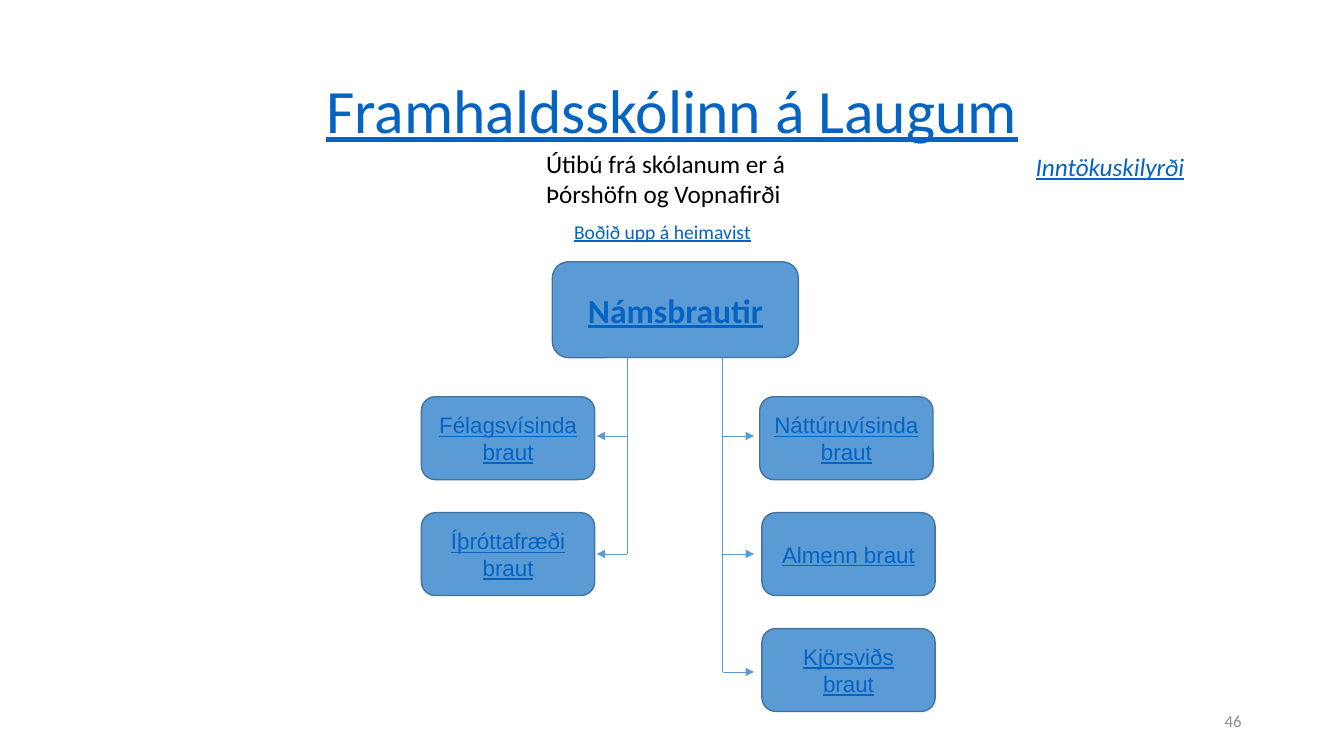
from dataclasses import dataclass
from typing import NamedTuple

from lxml.etree import SubElement
from pptx import Presentation
from pptx.dml.color import RGBColor
from pptx.enum.shapes import MSO_CONNECTOR as Connector, MSO_SHAPE as Shape
from pptx.enum.text import MSO_ANCHOR as Anchor, PP_ALIGN as Align
from pptx.oxml.ns import qn
from pptx.util import Pt


@dataclass(frozen=True)
class Theme:
    """Colours, fonts and type sizes of the slide."""
    link: str = "0563C1"
    ink: str = "000000"
    muted: str = "8C8C8C"
    fill: str = "5B9BD5"
    outline: str = "43739E"
    heading_font: str = "Calibri"
    branch_font: str = "Arial"
    title: int = 44
    root: int = 24
    body: int = 18
    branch: int = 16
    small: int = 14
    number: int = 12


class Box(NamedTuple):
    """A rectangle in points."""
    left: float
    top: float
    width: float
    height: float

    def lengths(self):
        """Return the four values as lengths."""
        return [Pt(value) for value in self]


THEME = Theme()


def write(shape, text, size, color=THEME.link, name=THEME.heading_font,
          align=Align.LEFT, anchor=Anchor.MIDDLE, bold=False, italic=False):
    """Put one styled paragraph in a shape, underlined when link-coloured."""
    frame = shape.text_frame
    frame.word_wrap = True
    frame.vertical_anchor = anchor
    para = frame.paragraphs[0]
    para.text = text
    para.alignment = align
    font = para.font
    font.name, font.size = name, Pt(size)
    font.bold, font.italic = bold, italic
    font.underline = color == THEME.link
    font.color.rgb = RGBColor.from_string(color)
    return para


def add_label(page, box, text, size, **style):
    """Add a text box."""
    return write(page.shapes.add_textbox(*box.lengths()), text, size, **style)


def add_node(page, box, text, size, **style):
    """Add a rounded box with centred link text."""
    node = page.shapes.add_shape(Shape.ROUNDED_RECTANGLE, *box.lengths())
    node.shadow.inherit = False
    node.fill.solid()
    node.fill.fore_color.rgb = RGBColor.from_string(THEME.fill)
    node.line.color.rgb = RGBColor.from_string(THEME.outline)
    node.line.width = Pt(1)
    write(node, text, size, align=Align.CENTER, **style)


def add_line(page, start, end, arrow=False):
    """Add a thin straight line, with an arrowhead at its end if asked."""
    line = page.shapes.add_connector(
        Connector.STRAIGHT, *[Pt(value) for value in (*start, *end)])
    line.line.color.rgb = RGBColor.from_string(THEME.fill)
    line.line.width = Pt(0.5)
    if arrow:
        SubElement(line.line._get_or_add_ln(), qn("a:tailEnd"), type="triangle")
    SubElement(line._element.spPr, qn("a:effectLst"))


def add_header(page, box):
    """Place the title and the notes under it."""
    left, top, width, height = box
    title = add_label(page, box, "Framhaldsskólinn á Laugum", THEME.title,
                      align=Align.CENTER)
    title.line_spacing = 0.9
    add_label(page, Box(left + 317, top + 73.4, 230.4, 51),
              "Útibú frá skólanum er á Þórshöfn og Vopnafirði", THEME.body,
              color=THEME.ink, anchor=Anchor.TOP)
    add_label(page, Box(left + 337, top + 124.6, 141, 24.5),
              "Boðið upp á heimavist", THEME.small, anchor=Anchor.TOP)
    add_label(page, Box(left + 666.7, top + 75.6, 142, 29), "Inntökuskilyrði",
              THEME.body, anchor=Anchor.TOP, italic=True)


def add_branch(page, box, trunk, tip, trunk_top, branches):
    """Stack nodes down a column and link each to a vertical trunk."""
    arrow_top, arrow_pitch, node_pitch = box.top + 28, 84.3, 82.8
    for row, (text, shift) in enumerate(branches):
        arrow_y = arrow_top + row * arrow_pitch
        add_node(page, Box(box.left + shift, box.top + row * node_pitch,
                           box.width, box.height),
                 text, THEME.branch, name=THEME.branch_font)
        add_line(page, (trunk, arrow_y), (tip, arrow_y), arrow=True)
    add_line(page, (trunk, trunk_top), (trunk, arrow_y))


def add_tree(page, box):
    """Place the root node and its two branches."""
    left, top, width, height = box
    root = Box(left + 93.6, top, 175.7, 68.4)
    add_node(page, root, "Námsbrautir", THEME.root, bold=True)
    trunk_top = top + root.height
    node_top, node_width, node_height = top + 96.4, 123.8, 59.2
    add_branch(page, Box(left, node_top, node_width, node_height),
               left + 146.9, left + 125.3, trunk_top,
               [("Félagsvísinda braut", 0), ("Íþróttafræði braut", 0)])
    add_branch(page, Box(left + width - node_width, node_top, node_width,
                         node_height),
               left + 215.3, left + 237.6, trunk_top,
               [("Náttúruvísinda braut", -1.5), ("Almenn braut", 0),
                ("Kjörsviðs braut", 0)])


def main():
    """Build and save the slide."""
    deck = Presentation()
    deck.slide_width, deck.slide_height = Pt(960), Pt(540)
    page = deck.slides.add_slide(deck.slide_layouts[6])
    add_header(page, Box(66, 28.8, 828, 104.4))
    add_tree(page, Box(301, 187, 367, 321.2))
    add_label(page, Box(678, 500.5, 216, 28.8), "46", THEME.number,
              color=THEME.muted, align=Align.RIGHT)
    deck.save("out.pptx")


if __name__ == "__main__":
    main()
